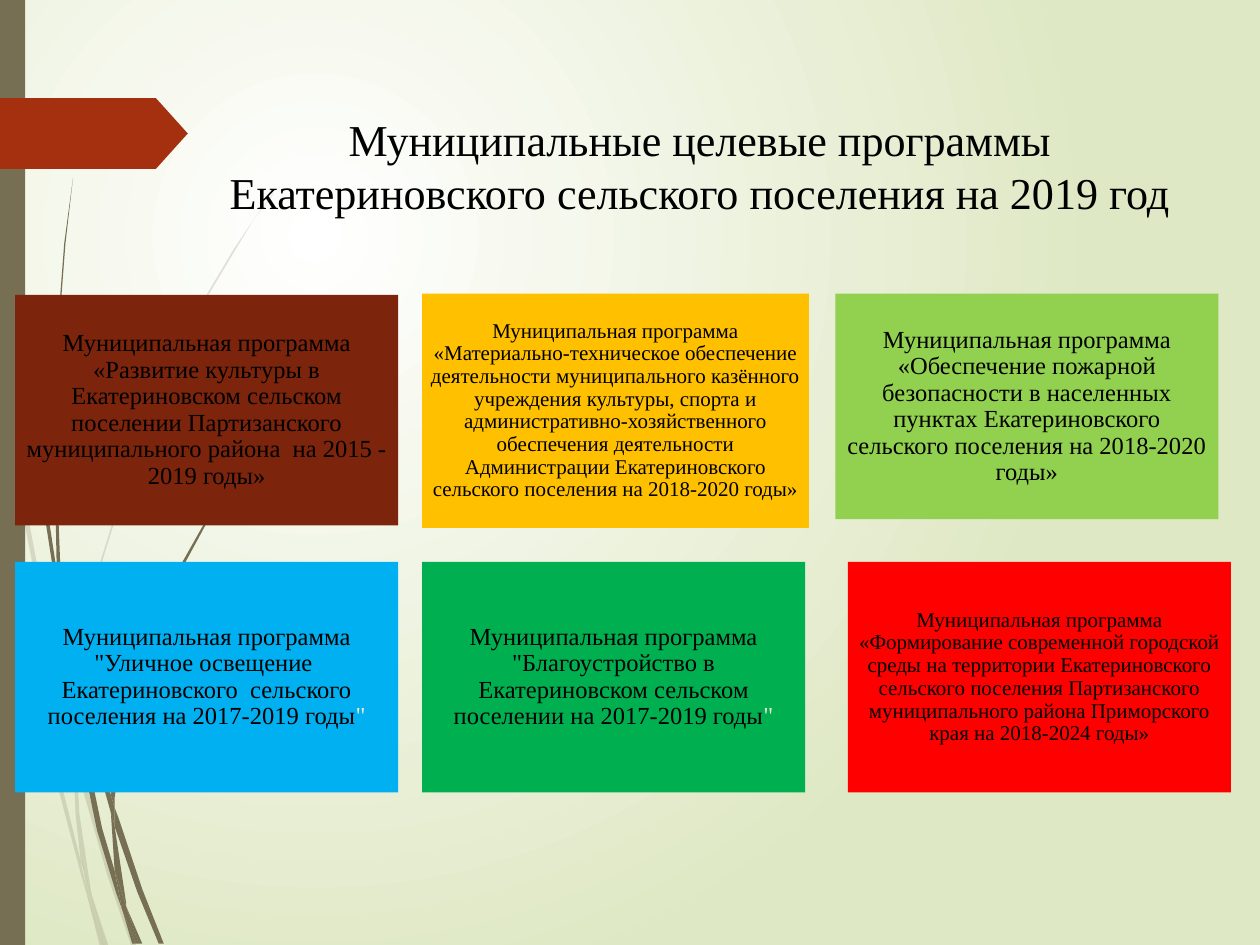
"""Build the slide listing the municipal programmes of the settlement."""
from dataclasses import dataclass

from lxml.etree import SubElement
from pptx import Presentation
from pptx.dml.color import RGBColor as RGB
from pptx.enum.shapes import MSO_SHAPE as Shape
from pptx.enum.text import MSO_ANCHOR as Anchor, MSO_AUTO_SIZE as AutoSize, PP_ALIGN as Align
from pptx.oxml.ns import qn
from pptx.util import Inches, Pt

FONT = "Times New Roman"
WHITE = RGB(0xFF, 0xFF, 0xFF)
BLACK = RGB(0x00, 0x00, 0x00)
SAGE = RGB(0xDF, 0xE8, 0xC4)
PALE = RGB(0xE3, 0xEA, 0xCF)
OLIVE = RGB(0x76, 0x6F, 0x54)
RUST = RGB(0xA5, 0x30, 0x10)
BROWN = RGB(0x7C, 0x24, 0x0C)
AMBER = RGB(0xFF, 0xC0, 0x00)
LIME = RGB(0x92, 0xD0, 0x50)
BLUE = RGB(0x00, 0xB0, 0xF0)
GREEN = RGB(0x00, 0xB0, 0x50)
RED = RGB(0xFF, 0x00, 0x00)

UNIT = Inches(0.01)
TITLE = "Муниципальные целевые программы Екатериновского сельского поселения на 2019 год"
PREFIX = "Муниципальная программа "


@dataclass
class Card:
    left: float
    top: float
    width: float
    height: float
    fill: RGB
    size: int
    text: str
    inset: float = 0.05
    pale_end: str = ""


CARDS = [
    Card(0.12, 2.34, 3.04, 1.83, BROWN, 14,
         "«Развитие культуры в Екатериновском сельском поселении Партизанского "
         "муниципального района  на 2015 - 2019 годы»"),
    Card(3.35, 2.33, 3.07, 1.86, AMBER, 12,
         "«Материально-техническое обеспечение деятельности муниципального казённого "
         "учреждения культуры, спорта и административно-хозяйственного обеспечения "
         "деятельности Администрации Екатериновского сельского поселения на 2018-2020 годы»"),
    Card(6.63, 2.33, 3.04, 1.79, LIME, 14,
         "«Обеспечение пожарной безопасности в населенных пунктах Екатериновского "
         "сельского поселения на 2018-2020 годы»", 0.06),
    Card(0.12, 4.46, 3.04, 1.83, BLUE, 14,
         '"Уличное освещение  Екатериновского  сельского поселения на 2017-2019 годы',
         0.06, '"'),
    Card(3.35, 4.46, 3.04, 1.83, GREEN, 14,
         '"Благоустройство в Екатериновском сельском поселении на 2017-2019 годы',
         pale_end='"'),
    Card(6.73, 4.46, 3.04, 1.83, RED, 12,
         "«Формирование современной городской среды на территории Екатериновского "
         "сельского поселения Партизанского муниципального района Приморского края "
         "на 2018-2024 годы»"),
]

FAINT_WISPS = [
    [(8, 350), (6, 322), (0, 282), (0, 299), (7, 344)],
    [(40, 522), (59, 599), (59, 586), (43, 520), (10, 345), (12, 376)],
    [(64, 607), (61, 596), (61, 610), (85, 694), (104, 750), (108, 750), (88, 692)],
    [(83, 750), (86, 750), (73, 711)],
    [(64, 683), (48, 619), (22, 469), (12, 376), (8, 350), (19, 470), (45, 621),
     (64, 693), (70, 714), (69, 707)],
    [(58, 599), (60, 646), (64, 683), (67, 692), (73, 711), (72, 706), (63, 646),
     (61, 610), (61, 608)],
    [(61, 584), (76, 462), (111, 349), (159, 245), (187, 198), (201, 175), (217, 154),
     (217, 153), (201, 175), (186, 197), (158, 244), (110, 348), (75, 461), (59, 584),
     (59, 586), (61, 596)],
    [(70, 714), (79, 750), (82, 750)],
    [(67, 692), (65, 683), (69, 707), (70, 714), (82, 750), (83, 750), (73, 711)],
]
DARK_WISPS = [
    [(5, 110), (14, 233), (27, 355), (46, 477), (47, 481), (45, 457), (45, 453),
     (30, 355), (15, 232), (6, 109), (4, 48), (3, 0), (2, 0), (3, 48)],
    [(73, 592), (88, 645), (88, 633), (88, 631), (77, 590), (50, 472), (53, 505)],
    [(94, 649), (91, 641), (91, 656), (109, 708), (126, 749), (130, 749), (113, 706)],
    [(91, 691), (81, 657), (60, 556), (53, 505), (47, 477), (56, 557), (77, 659),
     (92, 708), (97, 722), (96, 717)],
    [(50, 472), (48, 453), (44, 349), (48, 245), (52, 193), (58, 141), (51, 193),
     (47, 245), (43, 349), (45, 449), (49, 472)],
    [(110, 749), (113, 749), (100, 719)],
    [(91, 633), (103, 552), (131, 476), (169, 406), (191, 374), (203, 359), (216, 344),
     (215, 344), (203, 358), (191, 373), (168, 405), (129, 474), (101, 551), (88, 631),
     (91, 641)],
    [(97, 722), (105, 749), (108, 749)],
    [(88, 645), (91, 691), (96, 706), (100, 719), (100, 716), (91, 656), (90, 651)],
    [(88, 645), (90, 651), (91, 656), (91, 641), (88, 631), (88, 633)],
    [(96, 706), (91, 691), (96, 717), (97, 722), (108, 749), (110, 749), (100, 719)],
]


def paint(sp, color: RGB) -> None:
    sp.fill.solid()
    sp.fill.fore_color.rgb = color
    sp.line.fill.background()
    sp.shadow.inherit = False


def add_block(s, kind, left: float, top: float, width: float, height: float, color: RGB):
    sp = s.shapes.add_shape(kind, Inches(left), Inches(top), Inches(width), Inches(height))
    paint(sp, color)
    return sp


def add_wisp(s, points: list[tuple[int, int]], faint: bool) -> None:
    builder = s.shapes.build_freeform(*points[0], scale=UNIT)
    builder.add_line_segments(points[1:], close=True)
    sp = builder.convert_to_shape()
    paint(sp, OLIVE)
    if faint:
        color = next(sp._element.spPr.iter(qn("a:srgbClr")))
        SubElement(color, qn("a:alpha"), val="20000")


def style_run(r, size: float, color: RGB) -> None:
    r.font.name = FONT
    r.font.size = Pt(size)
    r.font.color.rgb = color


def add_card(s, card: Card) -> None:
    sp = add_block(s, Shape.RECTANGLE, card.left, card.top, card.width, card.height, card.fill)
    tf = sp.text_frame
    tf.word_wrap = True
    tf.vertical_anchor = Anchor.MIDDLE
    tf.margin_left = tf.margin_right = tf.margin_top = tf.margin_bottom = Inches(card.inset)
    p = tf.paragraphs[0]
    p.text = PREFIX + card.text
    p.alignment = Align.CENTER
    p.line_spacing = 0.9
    style_run(p.runs[0], card.size, BLACK)
    if card.pale_end:
        r = p.add_run()
        r.text = card.pale_end
        style_run(r, card.size, PALE)


def set_background(s) -> None:
    fill = s.background.fill
    fill.gradient()
    for stop, color, position in zip(fill.gradient_stops, (WHITE, SAGE), (0, 1)):
        stop.color.rgb = color
        stop.position = position
    grad = next(s._element.iter(qn("a:gradFill")))
    grad.remove(grad.find(qn("a:lin")))
    circle = SubElement(grad, qn("a:path"), path="circle")
    SubElement(circle, qn("a:fillToRect"), l="50000", t="50000", r="100000", b="100000")


def set_title(s) -> None:
    sp = s.shapes.title
    sp.left, sp.top, sp.width, sp.height = Inches(1.61), Inches(0.84), Inches(7.89), Inches(1)
    tf = sp.text_frame
    tf.text = TITLE
    tf.word_wrap = True
    tf.auto_size = AutoSize.NONE
    tf.vertical_anchor = Anchor.TOP
    p = tf.paragraphs[0]
    p.alignment = Align.CENTER
    style_run(p.runs[0], 25.2, BLACK)


def main() -> None:
    prs = Presentation()
    prs.slide_width, prs.slide_height = Inches(10), Inches(7.5)
    s = prs.slides.add_slide(prs.slide_layouts[5])
    set_background(s)
    set_title(s)
    for wisps, faint in ((FAINT_WISPS, True), (DARK_WISPS, False)):
        for points in wisps:
            add_wisp(s, points, faint)
    add_block(s, Shape.RECTANGLE, 0, 0, 0.2, 7.5, OLIVE)
    tab = add_block(s, Shape.PENTAGON, 0, 0.78, 1.49, 0.56, RUST)
    tab.adjustments[0] = 0.45
    for card in CARDS:
        add_card(s, card)
    prs.save("out.pptx")


if __name__ == "__main__":
    main()
